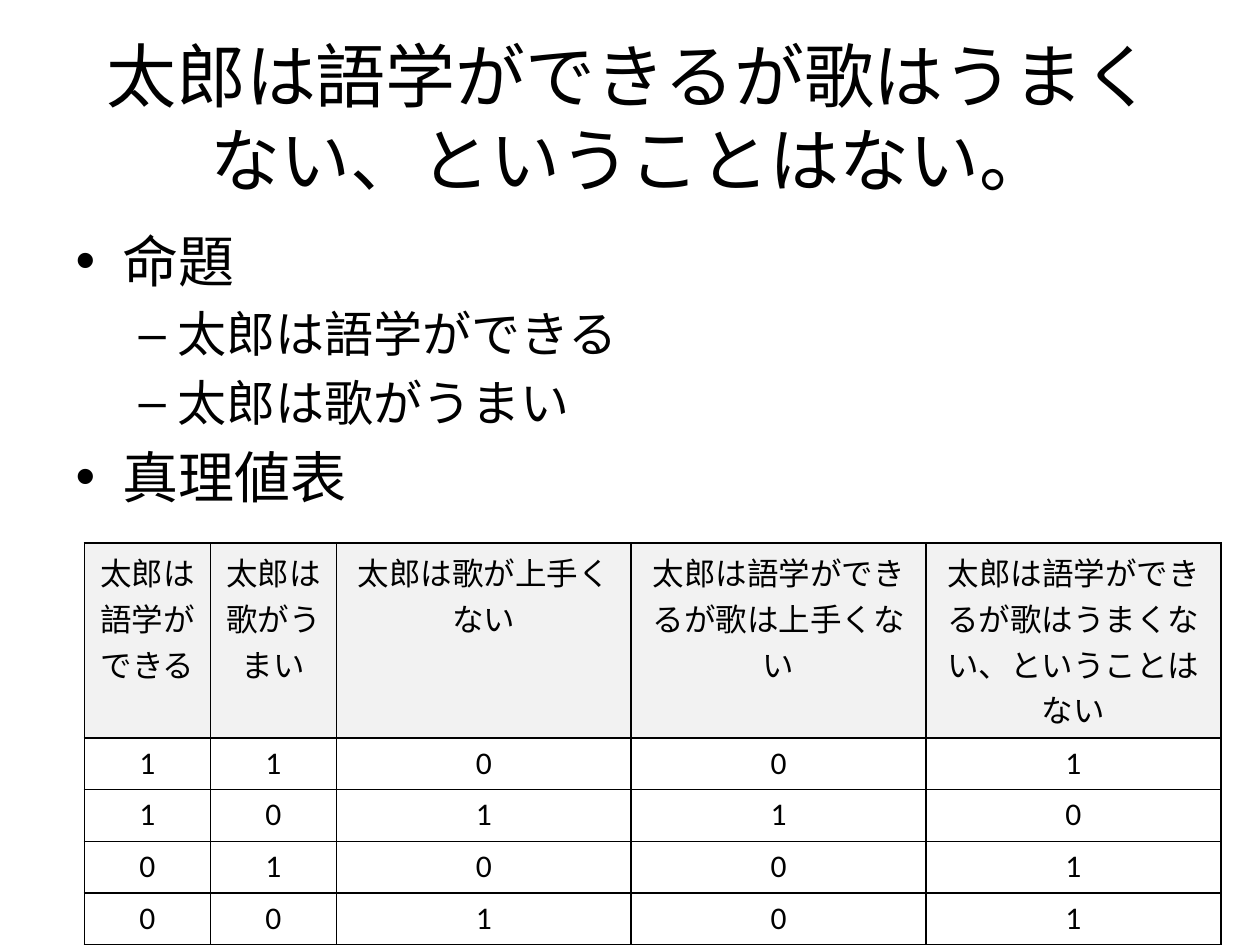
"""Build the truth table slide for a sentence about Taro."""
import itertools
import typing

import lxml.etree
import pptx
import pptx.dml.color
import pptx.enum.text
import pptx.oxml.ns
import pptx.util

Inches = pptx.util.Inches
Pt = pptx.util.Pt
ALIGN = pptx.enum.text.PP_ALIGN
HUES = {"ink": "000000", "head": "F2F2F2"}
FONT = "Calibri"
WIDTHS = (1, 1, 2.34, 2.34, 2.34)
ROW = 0.41
HEADS = (
    "太郎は語学ができる",
    "太郎は歌がうまい",
    "太郎は歌が上手くない",
    "太郎は語学ができるが歌は上手くない",
    "太郎は語学ができるが歌はうまくない、ということはない",
)


class Box(typing.NamedTuple):
    """Place and size in inches."""
    left: float
    top: float
    width: float
    height: float


class Item(typing.NamedTuple):
    """One line of the list."""
    text: str
    level: int = 0


ITEMS = (
    Item("命題"),
    Item("太郎は語学ができる", 1),
    Item("太郎は歌がうまい", 1),
    Item("真理値表"),
)


def color(name: str) -> pptx.dml.color.RGBColor:
    """Look up a named colour."""
    return pptx.dml.color.RGBColor.from_string(HUES[name])


def write(para, text: str, *, size: float, align=None, level: int = 0) -> None:
    """Put formatted text in a paragraph."""
    para.level = level
    para.alignment = align
    run = para.add_run()
    run.text = text
    run.font.size = Pt(size)
    run.font.name = FONT
    run.font.color.rgb = color("ink")


def place(shape, box: Box) -> None:
    """Move and size a shape."""
    shape.left, shape.top, shape.width, shape.height = map(Inches, box)


def frame(cell) -> None:
    """Draw a thin line on each side of a cell."""
    props = cell._tc.get_or_add_tcPr()
    for side in ("lnL", "lnR", "lnT", "lnB"):
        line = lxml.etree.SubElement(
            props, pptx.oxml.ns.qn(f"a:{side}"), w=str(Pt(1)))
        fill = lxml.etree.SubElement(line, pptx.oxml.ns.qn("a:solidFill"))
        lxml.etree.SubElement(
            fill, pptx.oxml.ns.qn("a:srgbClr"), val=HUES["ink"])


def fill_list(shape, items: typing.Sequence[Item]) -> None:
    """Write the bullet list."""
    text = shape.text_frame
    for index, item in enumerate(items):
        para = text.add_paragraph() if index else text.paragraphs[0]
        write(para, item.text, size=28 if item.level else 32, level=item.level)


def truth() -> typing.Iterator[tuple[int, ...]]:
    """Work out each row of truth values."""
    for speak, sing in itertools.product((1, 0), repeat=2):
        both = speak * (1 - sing)
        yield speak, sing, 1 - sing, both, 1 - both


def draw_table(slide, left: float, top: float) -> None:
    """Add the truth table."""
    rows = [HEADS, *truth()]
    box = Box(left, top, sum(WIDTHS), ROW * len(rows))
    table = slide.shapes.add_table(
        len(rows), len(WIDTHS), *map(Inches, box)).table
    for column, width in zip(table.columns, WIDTHS):
        column.width = Inches(width)
    for y, row in enumerate(rows):
        table.rows[y].height = Inches(ROW)
        for x, value in enumerate(row):
            cell = table.cell(y, x)
            write(cell.text_frame.paragraphs[0], str(value),
                  size=18, align=ALIGN.CENTER)
            frame(cell)
            if y:
                cell.fill.background()
            else:
                cell.fill.solid()
                cell.fill.fore_color.rgb = color("head")


def main() -> None:
    """Build and save the slide."""
    deck = pptx.Presentation()
    deck.slide_width, deck.slide_height = Inches(10), Inches(7.5)
    slide = deck.slides.add_slide(deck.slide_layouts[1])
    title, body = slide.placeholders
    place(title, Box(0.5, 0.3, 9, 1.25))
    place(body, Box(0.5, 1.75, 9, 4.95))
    for shape in (title, body):
        shape.text_frame.auto_size = pptx.enum.text.MSO_AUTO_SIZE.NONE
    write(title.text_frame.paragraphs[0],
          "太郎は語学ができるが歌はうまくない、ということはない。",
          size=40, align=ALIGN.CENTER)
    fill_list(body, ITEMS)
    draw_table(slide, 0.67, 4.31)
    deck.save("out.pptx")


if __name__ == "__main__":
    main()
